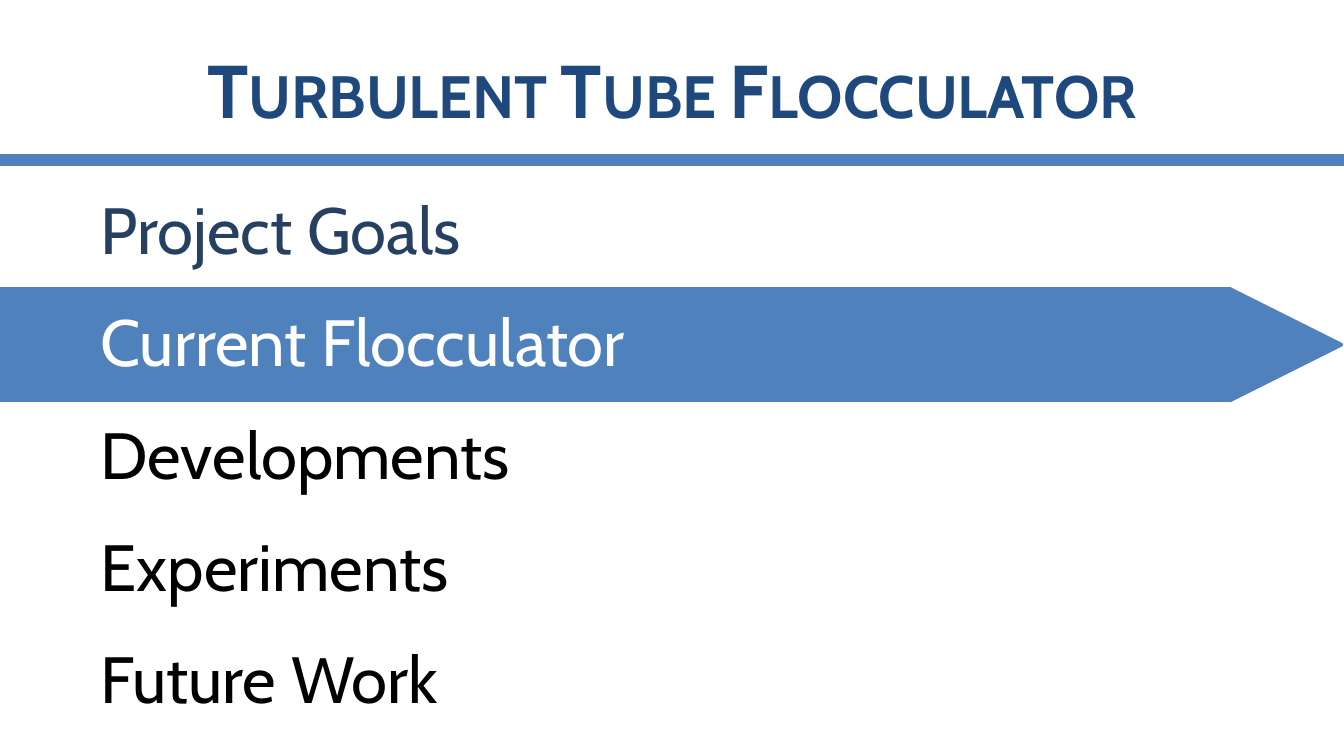
from lxml import etree
from pptx import Presentation
from pptx import util as u
from pptx.dml.color import RGBColor
from pptx.enum import shapes, text
from pptx.oxml.ns import qn

COLORS = {"blue": "4F81BD", "navy": "1F497D", "done": "254061",
          "current": "FFFFFF", "next": "000000"}
TOPICS = [("Project Goals", "done"), ("Current Flocculator", "current"),
          ("Developments", "next"), ("Experiments", "next"), ("Future Work", "next")]
PAGE_WIDTH = 10
PAGE_HEIGHT = PAGE_WIDTH * 9 / 16
FIRST_TOP, LAST_TOP = 1.31, 4.65
ROW_STEP = (LAST_TOP - FIRST_TOP) / (len(TOPICS) - 1)


class AgendaPage:
    """Holds the style and the current slide, and draws each kind of element."""

    def __init__(self, page, font="Cabin"):
        self.page = page
        self.font = font

    def color(self, name):
        return RGBColor.from_string(COLORS[name])

    def rule(self, top, width, weight):
        line = self.page.shapes.add_connector(
            shapes.MSO_CONNECTOR.STRAIGHT, 0, u.Inches(top), u.Inches(width), u.Inches(top))
        line.line.color.rgb = self.color("blue")
        line.line.width = u.Pt(weight)
        etree.SubElement(line._element.spPr, qn("a:effectLst"))

    def solid(self, parent, kind, left, top, width, height, rotation=0):
        shape = parent.shapes.add_shape(kind, *map(u.Inches, (left, top, width, height)))
        shape.rotation = rotation
        shape.shadow.inherit = False
        shape.fill.solid()
        shape.fill.fore_color.rgb = self.color("blue")
        shape.line.color.rgb = self.color("blue")
        shape.line.width = u.Pt(2)

    def arrow_band(self, top, length, height):
        band = self.page.shapes.add_group_shape()
        self.solid(band, shapes.MSO_SHAPE.RECTANGLE, 0, top, length, height)
        self.solid(band, shapes.MSO_SHAPE.ISOSCELES_TRIANGLE, length, top, height, height, 90)

    def label(self, words, left, top, width, height, size, color):
        box = self.page.shapes.add_textbox(*map(u.Inches, (left, top, width, height)))
        frame = box.text_frame
        frame.text = words
        frame.word_wrap = True
        frame.margin_left = frame.margin_right = u.Inches(0.1)
        frame.margin_top = frame.margin_bottom = u.Inches(0.1)
        para = frame.paragraphs[0]
        span = para.runs[0]
        span.font.name = self.font
        span.font.size = u.Pt(size)
        span.font.color.rgb = self.color(color)
        return para

    def title(self, words):
        para = self.label(words, 0, 0.23, PAGE_WIDTH, 0.94, 40, "navy")
        para.alignment = text.PP_ALIGN.CENTER
        para.runs[0].font.bold = True
        para.runs[0]._r.get_or_add_rPr().set("cap", "small")

    def topic(self, words, top, color):
        para = self.label(words, 0.5, top, 9, 0.67, 35, color)
        para.space_before = u.Pt(6.4)
        para._p.get_or_add_pPr().set("marL", str(u.Inches(0.15)))


def main():
    deck = Presentation()
    deck.slide_width, deck.slide_height = u.Inches(PAGE_WIDTH), u.Inches(PAGE_HEIGHT)
    agenda = AgendaPage(deck.slides.add_slide(deck.slide_layouts[6]))
    agenda.rule(1.19, PAGE_WIDTH, 6)
    agenda.arrow_band(2.15, 9.15, 0.83)
    for row, (words, state) in enumerate(TOPICS):
        agenda.topic(words, FIRST_TOP + row * ROW_STEP, state)
    agenda.title("Turbulent Tube Flocculator")
    deck.save("out.pptx")


if __name__ == "__main__":
    main()
